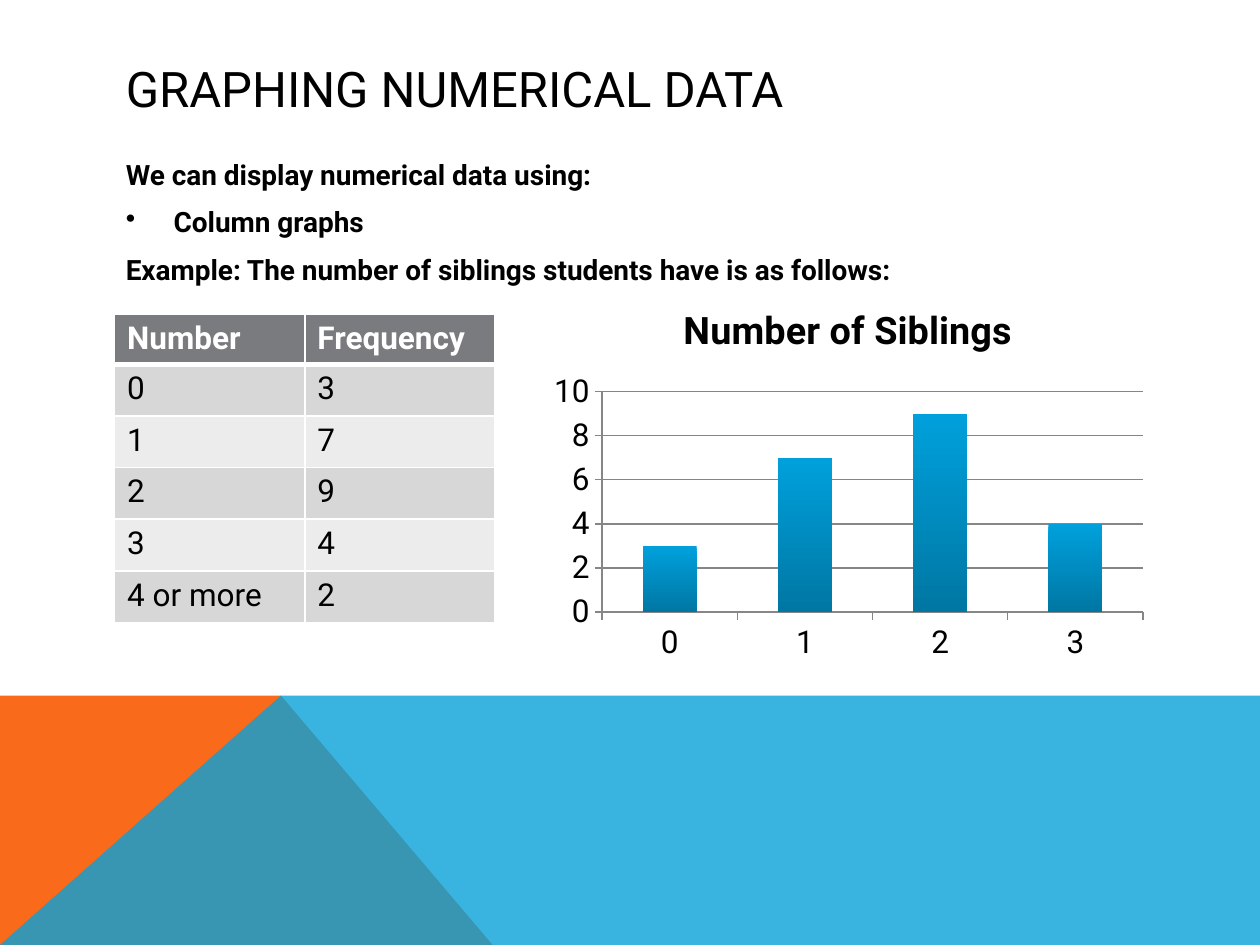
from dataclasses import dataclass

from pptx import Presentation
from pptx.chart.data import CategoryChartData
from pptx.dml.color import RGBColor
from pptx.enum.chart import XL_CHART_TYPE, XL_TICK_MARK
from pptx.enum.text import MSO_ANCHOR
from pptx.oxml import parse_xml
from pptx.oxml.ns import nsdecls
from pptx.oxml.xmlchemy import OxmlElement
from pptx.util import Inches, Pt

COLUMN = XL_CHART_TYPE.COLUMN_CLUSTERED
TICK_OUT = XL_TICK_MARK.OUTSIDE
TICK_NONE = XL_TICK_MARK.NONE
MIDDLE = MSO_ANCHOR.MIDDLE
TOP = MSO_ANCHOR.TOP


@dataclass(frozen=True)
class Theme:
    font: str = "Roboto"
    black: str = "000000"
    white: str = "FFFFFF"
    orange: str = "F96A1B"
    blue: str = "08A1D9"
    header: str = "797B7E"
    bands: tuple = ("D7D7D8", "ECECEC")
    bar: tuple = ("00A0DC", "0077A3")
    axis: str = "868686"
    title: float = 28
    body: float = 16
    data: float = 18
    chart_title: float = 21.6


@dataclass(frozen=True)
class Panel:
    points: tuple
    color: str
    alpha: int = 100


@dataclass(frozen=True)
class Line:
    text: str
    indent: float = 0
    bullet: str = ""


T = Theme()
PANELS = (
    Panel(((0, 7.5), (0, 5.52), (2.23, 5.52), (3.91, 7.5)), T.orange),
    Panel(((0, 7.5), (2.23, 5.52), (10, 5.52), (10, 7.5)), T.blue, 80),
)
LINES = (
    Line("We can display numerical data using:", 0.38),
    Line("Column graphs", 0.38, "•"),
    Line("Example: The number of siblings students have is as follows:"),
)
ROWS = (("Number", "Frequency"), ("0", "3"), ("1", "7"), ("2", "9"),
        ("3", "4"), ("4 or more", "2"))


def rgb(color: str) -> RGBColor:
    return RGBColor.from_string(color)


def style_font(font, size: float, color: str = T.black, bold: bool = False) -> None:
    font.name, font.size, font.bold = T.font, Pt(size), bold
    font.color.rgb = rgb(color)


def write(p, text: str, *, size: float, color: str = T.black, bold: bool = False,
          before: float = 0, indent: float = 0, bullet: str = "") -> None:
    r = p.add_run()
    r.text = text
    style_font(r.font, size, color, bold)
    p.space_before = Pt(before)
    pPr = p._p.get_or_add_pPr()
    if indent:
        pPr.set("marL", str(Inches(indent)))
        pPr.set("indent", str(-Inches(indent)))
    if bullet:
        mark = OxmlElement("a:buChar")
        mark.set("char", bullet)
        pPr.append(mark)


def add_panel(s, panel: Panel) -> None:
    points = [(Inches(x), Inches(y)) for x, y in panel.points]
    builder = s.shapes.build_freeform(*points[0])
    builder.add_line_segments(points[1:], close=True)
    sp = builder.convert_to_shape()
    sp.shadow.inherit = False
    sp.fill.solid()
    sp.fill.fore_color.rgb = rgb(panel.color)
    sp.line.fill.background()
    if panel.alpha < 100:
        alpha = OxmlElement("a:alpha")
        alpha.set("val", str(panel.alpha * 1000))
        sp._element.spPr.find(".//" + "{*}srgbClr").append(alpha)


def add_text(s, box: tuple, lines: tuple, *, size: float, bold: bool = False,
             before: float = 0, anchor=TOP) -> None:
    tf = s.shapes.add_textbox(*map(Inches, box)).text_frame
    tf.word_wrap = True
    tf.vertical_anchor = anchor
    for i, line in enumerate(lines):
        p = tf.add_paragraph() if i else tf.paragraphs[0]
        write(p, line.text, size=size, bold=bold, before=before,
              indent=line.indent, bullet=line.bullet)


def set_borders(cell, bottom: float = 1, top: float = 1) -> None:
    tcPr = cell._tc.get_or_add_tcPr()
    widths = {"lnL": 1, "lnR": 1, "lnT": top, "lnB": bottom}
    for i, (tag, width) in enumerate(widths.items()):
        tcPr.insert(i, parse_xml(
            f'<a:{tag} {nsdecls("a")} w="{Pt(width)}"><a:solidFill>'
            f'<a:srgbClr val="{T.white}"/></a:solidFill></a:{tag}>'))


def add_frequency_table(s) -> None:
    frame = s.shapes.add_table(len(ROWS), 2, Inches(0.91), Inches(2.49),
                               Inches(3.02), Inches(2.42))
    table = frame.table
    for i, values in enumerate(ROWS):
        head = i == 0
        table.rows[i].height = Inches(0.38 if head else 0.41)
        for j, value in enumerate(values):
            cell = table.cell(i, j)
            cell.fill.solid()
            cell.fill.fore_color.rgb = rgb(T.header if head else T.bands[(i - 1) % 2])
            set_borders(cell, bottom=3 if head else 1, top=3 if i == 1 else 1)
            write(cell.text_frame.paragraphs[0], value, size=T.data,
                  color=T.white if head else T.black, bold=head)


def add_siblings_chart(s) -> None:
    data = CategoryChartData()
    data.categories = ["0", "1", "2", "3"]
    data.add_series("Series 1", (3, 7, 9, 4))
    chart = s.shapes.add_chart(COLUMN, Inches(4.29), Inches(2.25),
                               Inches(4.88), Inches(3.07), data).chart
    style_font(chart.font, T.data)
    chart.has_legend = False
    chart.has_title = True
    write(chart.chart_title.text_frame.paragraphs[0], "Number of Siblings",
          size=T.chart_title, bold=True)
    chart.chart_title.include_in_layout = False
    for axis in (chart.category_axis, chart.value_axis):
        axis.major_tick_mark, axis.minor_tick_mark = TICK_OUT, TICK_NONE
        axis.format.line.color.rgb = rgb(T.axis)
    values = chart.value_axis
    values.minimum_scale, values.maximum_scale, values.major_unit = 0, 10, 2
    values.major_gridlines.format.line.color.rgb = rgb(T.axis)
    plot = chart.plots[0]
    plot.gap_width, plot.vary_by_categories = 150, False
    fill = plot.series[0].format.fill
    fill.gradient()
    fill.gradient_angle = 270
    for stop, color in zip(fill.gradient_stops, T.bar):
        stop.color.rgb = rgb(color)
    layout = parse_xml(
        f'<c:layout {nsdecls("c")}><c:manualLayout><c:layoutTarget val="inner"/>'
        '<c:xMode val="edge"/><c:yMode val="edge"/><c:x val="0.1"/><c:y val="0.28"/>'
        '<c:w val="0.88"/><c:h val="0.57"/></c:manualLayout></c:layout>')
    area = chart._chartSpace.chart.plotArea
    for old in area.findall("{*}layout"):
        area.remove(old)
    area.insert(0, layout)


def main() -> None:
    """Build the slide on graphing numerical data."""
    prs = Presentation()
    prs.slide_width, prs.slide_height = Inches(10), Inches(7.5)
    s = prs.slides.add_slide(prs.slide_layouts[6])
    for panel in PANELS:
        add_panel(s, panel)
    add_text(s, (0.9, 0.4, 8.22, 0.6), (Line("GRAPHING NUMERICAL DATA"),),
             size=T.title, anchor=MIDDLE)
    add_text(s, (0.9, 1.2, 8.22, 3.91), LINES, size=T.body, bold=True, before=8)
    add_frequency_table(s)
    add_siblings_chart(s)
    prs.save("out.pptx")


if __name__ == "__main__":
    main()
